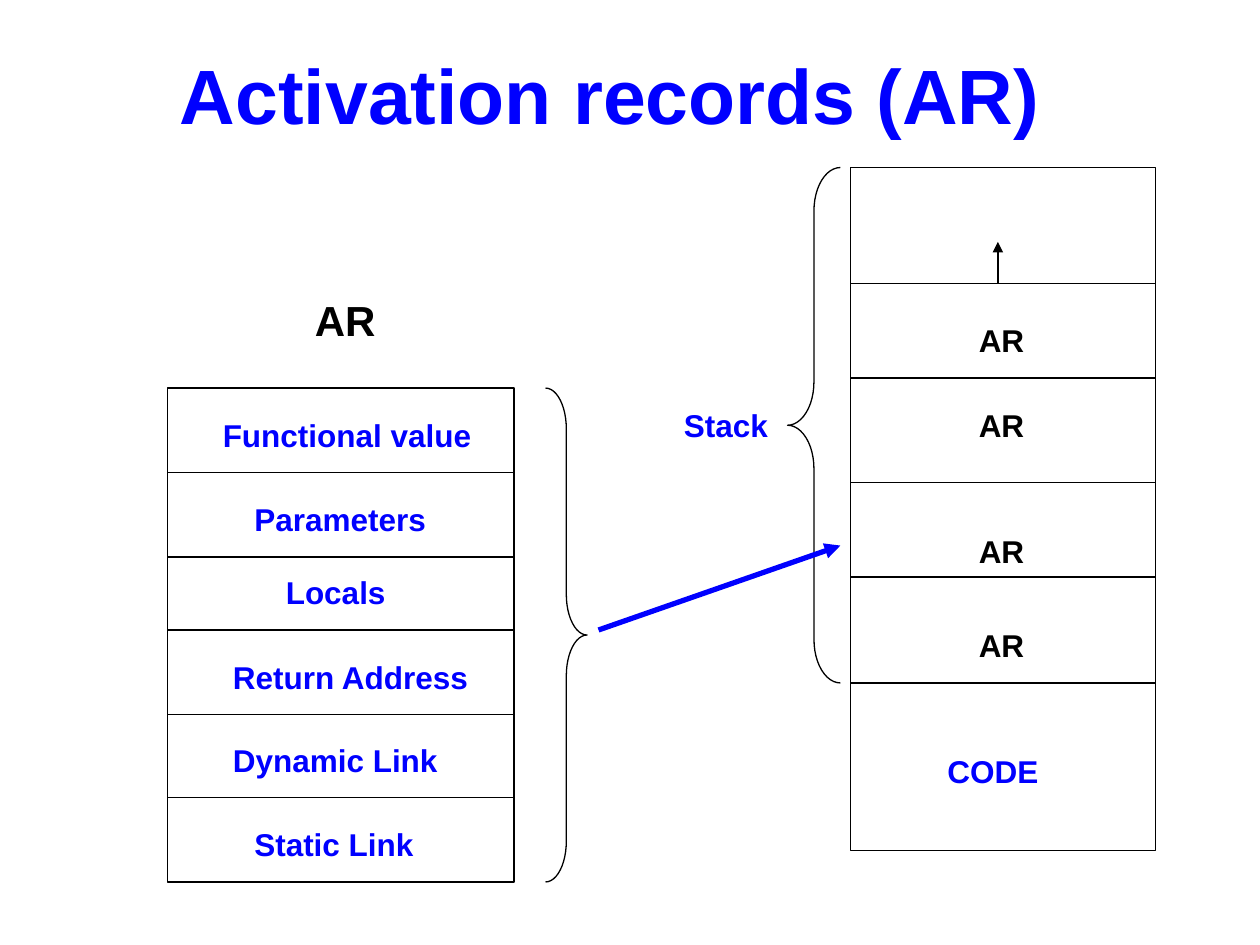
from lxml import etree
from pptx import Presentation
from pptx.dml.color import RGBColor
from pptx.enum import shapes, text
from pptx.oxml import ns
from pptx.util import Inches, Pt

COLORS = {"ink": "000000", "accent": "0000FF"}
FONT = "Arial"

RECORD_LEFT, RECORD_TOP, RECORD_WIDTH, RECORD_HEIGHT = 1.33, 3.08, 2.75, 3.92
MEMORY_LEFT, MEMORY_TOP, MEMORY_WIDTH, MEMORY_HEIGHT = 6.75, 1.33, 2.42, 5.42

RECORD_DIVIDERS = [3.75, 4.42, 5, 5.67, 6.33]
MEMORY_DIVIDERS = [2.25, 3, 3.83, 4.58, 5.42]

RECORD_FIELDS = [
    ("Functional value", 1.67, 3.25, 2.17),
    ("Parameters", 1.92, 3.92, 1.56),
    ("Locals", 2.17, 4.5, 0.99),
    ("Return Address", 1.75, 5.17, 2.08),
    ("Dynamic Link", 1.75, 5.83, 1.83),
    ("Static Link", 1.92, 6.5, 1.47),
]
STACKED_RECORD_TOPS = [2.5, 3.17, 4.17, 4.92]


def rgb(name):
    return RGBColor.from_string(COLORS[name])


def add_label(slide, words, left, top, width, height=0.4, size=18, color="accent"):
    label = slide.shapes.add_textbox(
        Inches(left), Inches(top), Inches(width), Inches(height))
    frame = label.text_frame
    frame.word_wrap = False
    frame.auto_size = text.MSO_AUTO_SIZE.SHAPE_TO_FIT_TEXT
    run = frame.paragraphs[0].add_run()
    run.text = words
    run.font.name = FONT
    run.font.size = Pt(size)
    run.font.bold = True
    run.font.color.rgb = rgb(color)


def add_outline(slide, preset, left, top, width, height):
    outline = slide.shapes.add_shape(
        preset, Inches(left), Inches(top), Inches(width), Inches(height))
    outline.shadow.inherit = False
    outline.fill.background()
    outline.line.color.rgb = rgb("ink")
    outline.line.width = Pt(0.75)
    return outline


def add_brace(slide, preset, left, top, width, height, curl):
    brace = add_outline(slide, preset, left, top, width, height)
    brace.adjustments[0] = curl
    brace.adjustments[1] = 0.5


def add_line(slide, start, end, color="ink", width=0.75, arrow=False):
    line = slide.shapes.add_connector(
        shapes.MSO_CONNECTOR.STRAIGHT, *map(Inches, (*start, *end)))
    line.line.color.rgb = rgb(color)
    line.line.width = Pt(width)
    if arrow:
        stroke = line.line._get_or_add_ln()
        etree.SubElement(stroke, ns.qn("a:tailEnd"), type="triangle")
    etree.SubElement(line._element.spPr, ns.qn("a:effectLst"))


def add_divided_box(slide, left, top, width, height, dividers):
    add_outline(slide, shapes.MSO_SHAPE.RECTANGLE, left, top, width, height)
    for y in dividers:
        add_line(slide, (left, y), (left + width, y))


def add_memory(slide):
    add_divided_box(slide, MEMORY_LEFT, MEMORY_TOP, MEMORY_WIDTH,
                    MEMORY_HEIGHT, MEMORY_DIVIDERS)
    add_line(slide, (7.92, MEMORY_DIVIDERS[0]), (7.92, 1.92), arrow=True)
    for top in STACKED_RECORD_TOPS:
        add_label(slide, "AR", 7.67, top, 0.56, color="ink")
    add_label(slide, "CODE", 7.42, 5.92, 0.92)
    add_label(slide, "Stack", 5.33, 3.17, 0.87)
    add_brace(slide, shapes.MSO_SHAPE.LEFT_BRACE, 6.25, MEMORY_TOP, 0.42,
              MEMORY_DIVIDERS[-1] - MEMORY_TOP, 0.82)


def add_record(slide):
    add_divided_box(slide, RECORD_LEFT, RECORD_TOP, RECORD_WIDTH,
                    RECORD_HEIGHT, RECORD_DIVIDERS)
    add_label(slide, "AR", 2.4, 2.29, 0.68, 0.5, size=24, color="ink")
    for field, left, top, width in RECORD_FIELDS:
        add_label(slide, field, left, top, width)
    add_brace(slide, shapes.MSO_SHAPE.RIGHT_BRACE, 4.33, RECORD_TOP, 0.33,
              RECORD_HEIGHT, 0.98)


def main():
    deck = Presentation()
    deck.slide_width, deck.slide_height = Inches(10), Inches(7.5)
    slide = deck.slides.add_slide(deck.slide_layouts[6])
    add_label(slide, "Activation records (AR)", 1.33, 0.33, 7.03, 0.83, size=44)
    add_memory(slide)
    add_record(slide)
    add_line(slide, (4.75, 5), (6.67, 4.33), "accent", 3, arrow=True)
    deck.save("out.pptx")


if __name__ == "__main__":
    main()
